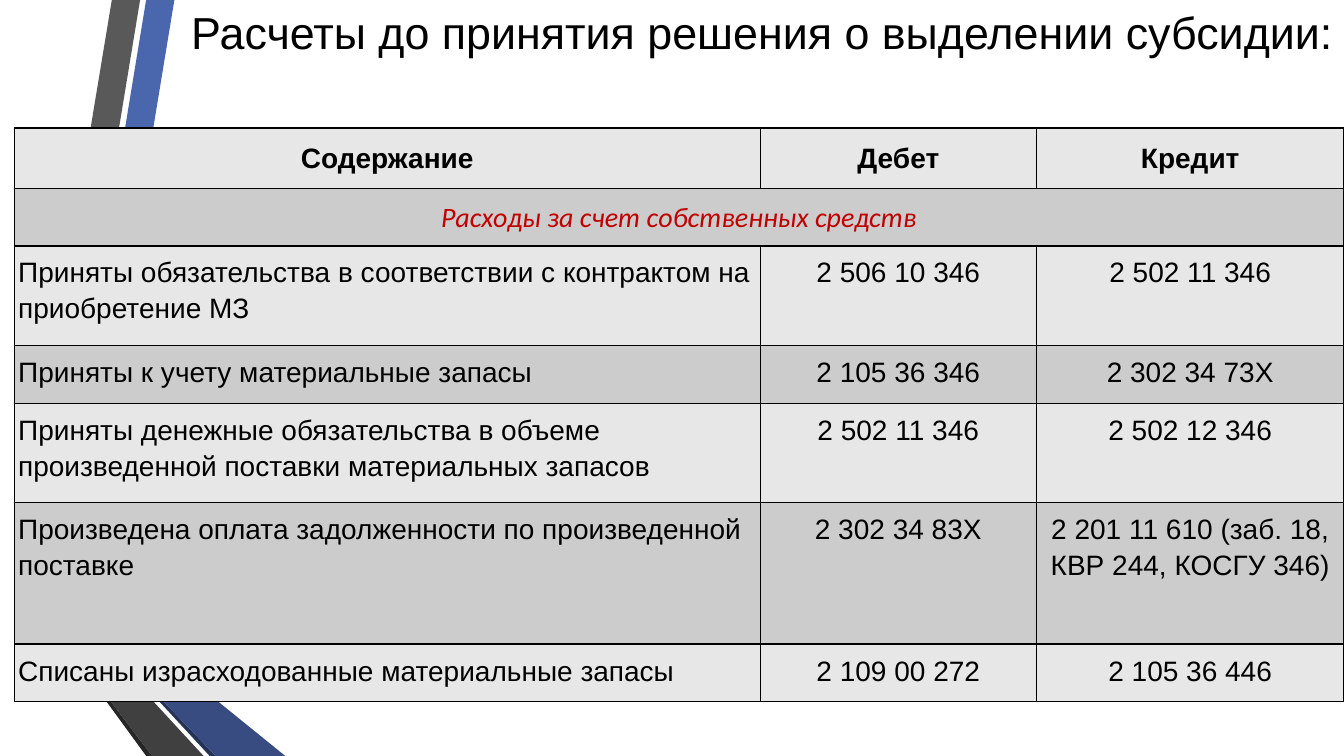
from dataclasses import dataclass

from lxml import etree
from pptx import Presentation
from pptx.dml.color import RGBColor
from pptx.enum.text import MSO_ANCHOR, PP_ALIGN
from pptx.oxml.ns import qn
from pptx.util import Pt

PX = 9144  # EMU per px, 100 px to the inch
LEFT, CENTER, RIGHT = PP_ALIGN.LEFT, PP_ALIGN.CENTER, PP_ALIGN.RIGHT
TOP, MIDDLE = MSO_ANCHOR.TOP, MSO_ANCHOR.MIDDLE
TITLE_ONLY = 5

TITLE = "Расчеты до принятия решения о выделении субсидии:"
HEADINGS = ("Содержание", "Дебет", "Кредит")
SECTION = "Расходы за счет собственных средств"
ENTRIES = [
    ("Приняты обязательства в соответствии с контрактом на приобретение МЗ",
     "2 506 10 346", "2 502 11 346"),
    ("Приняты к учету материальные запасы", "2 105 36 346", "2 302 34 73Х"),
    ("Приняты денежные обязательства в объеме произведенной поставки материальных запасов",
     "2 502 11 346", "2 502 12 346"),
    ("Произведена оплата задолженности по произведенной поставке",
     "2 302 34 83Х", "2 201 11 610 (заб. 18, КВР 244, КОСГУ 346)"),
    ("Списаны израсходованные материальные запасы", "2 109 00 272", "2 105 36 446"),
]

SLIDE_SIZE = (1333, 750)
TITLE_BOX = (77, 0, 1256, 63)
TABLE_CORNER = (14, 127)
COLUMN_WIDTHS = (740, 274, 305)
ROW_HEIGHTS = (60, 57, 99, 57, 99, 140, 57)
CELL_INSETS = (4, 7, 4, 7)
HEADING_INSETS = (10, 5, 10, 5)

RIBBONS = [
    ("4A66AC", [(50, 578), (77, 583), (173, 0), (145, 0)]),
    ("595959", [(139, 0), (111, 0), (16, 573), (44, 577)]),
    ("262626", [(16, 573), (145, 750), (151, 750)]),
    ("253356", [(50, 579), (208, 750), (214, 750)]),
    ("384C81", [(50, 579), (214, 750), (283, 750), (77, 583), (50, 578)]),
    ("404040", [(202, 750), (48, 583), (43, 578), (44, 577), (16, 573), (151, 750)]),
]


@dataclass(frozen=True)
class Theme:
    text: str = "000000"
    accent: str = "C00000"
    bands: tuple = ("E7E7E7", "CCCCCC")
    border: str = "000000"
    border_width: int = Pt(1)
    font: str = "Arial"
    section_font: str = "Calibri"
    title_size: int = Pt(32)
    table_size: int = Pt(20)
    line_spacing: float = 1.15


THEME = Theme()


def style(paragraph, align, size, name=THEME.font, color=THEME.text, bold=False, italic=False):
    paragraph.alignment = align
    font = paragraph.font
    font.name, font.size, font.bold, font.italic = name, size, bold, italic
    font.color.rgb = RGBColor.from_string(color)


def draw_ribbon(shapes, color, points):
    builder = shapes.build_freeform(*points[0], scale=PX)
    builder.add_line_segments(points[1:], close=True)
    ribbon = builder.convert_to_shape()
    ribbon.shadow.inherit = False
    ribbon.fill.solid()
    ribbon.fill.fore_color.rgb = RGBColor.from_string(color)
    ribbon.line.fill.background()


def add_borders(cell):
    """Outline all four sides; the lines must precede the fill in the cell XML."""
    properties = cell._tc.get_or_add_tcPr()
    for place, side in enumerate(("a:lnL", "a:lnR", "a:lnT", "a:lnB")):
        line = etree.Element(qn(side), w=str(THEME.border_width))
        fill = etree.SubElement(line, qn("a:solidFill"))
        etree.SubElement(fill, qn("a:srgbClr"), val=THEME.border)
        properties.insert(place, line)


def fill_cell(cell, text, row, column):
    cell.text = text
    cell.fill.solid()
    cell.fill.fore_color.rgb = RGBColor.from_string(THEME.bands[row % 2])
    insets = CELL_INSETS if row else HEADING_INSETS
    cell.margin_left, cell.margin_top, cell.margin_right, cell.margin_bottom = (
        inset * PX for inset in insets)
    cell.vertical_anchor = TOP if row else MIDDLE
    paragraph = cell.text_frame.paragraphs[0]
    if row == 0:
        style(paragraph, CENTER, THEME.table_size, bold=True)
    else:
        paragraph.line_spacing = THEME.line_spacing
        if row == 1:
            style(paragraph, CENTER, THEME.table_size, THEME.section_font,
                  THEME.accent, italic=True)
        else:
            style(paragraph, CENTER if column else LEFT, THEME.table_size)
    add_borders(cell)


def draw_table(shapes):
    rows = [HEADINGS, (SECTION, "", ""), *ENTRIES]
    box = (*TABLE_CORNER, sum(COLUMN_WIDTHS), sum(ROW_HEIGHTS))
    table = shapes.add_table(len(rows), len(HEADINGS), *(v * PX for v in box)).table
    for column, width in zip(table.columns, COLUMN_WIDTHS):
        column.width = width * PX
    for table_row, height in zip(table.rows, ROW_HEIGHTS):
        table_row.height = height * PX
    for r, row in enumerate(rows):
        for c, text in enumerate(row):
            fill_cell(table.cell(r, c), text, r, c)
    table.cell(1, 0).merge(table.cell(1, len(HEADINGS) - 1))


def place_title(title):
    title.left, title.top, title.width, title.height = (v * PX for v in TITLE_BOX)
    frame = title.text_frame
    frame.text = TITLE
    frame.word_wrap = True
    frame.vertical_anchor = MIDDLE
    style(frame.paragraphs[0], RIGHT, THEME.title_size)


def main():
    deck = Presentation()
    deck.slide_width, deck.slide_height = (v * PX for v in SLIDE_SIZE)
    shapes = deck.slides.add_slide(deck.slide_layouts[TITLE_ONLY]).shapes
    for color, points in RIBBONS:
        draw_ribbon(shapes, color, points)
    place_title(shapes.title)
    shapes._spTree.append(shapes.title._element)  # title in front of the ribbons
    draw_table(shapes)
    deck.save("out.pptx")


if __name__ == "__main__":
    main()
